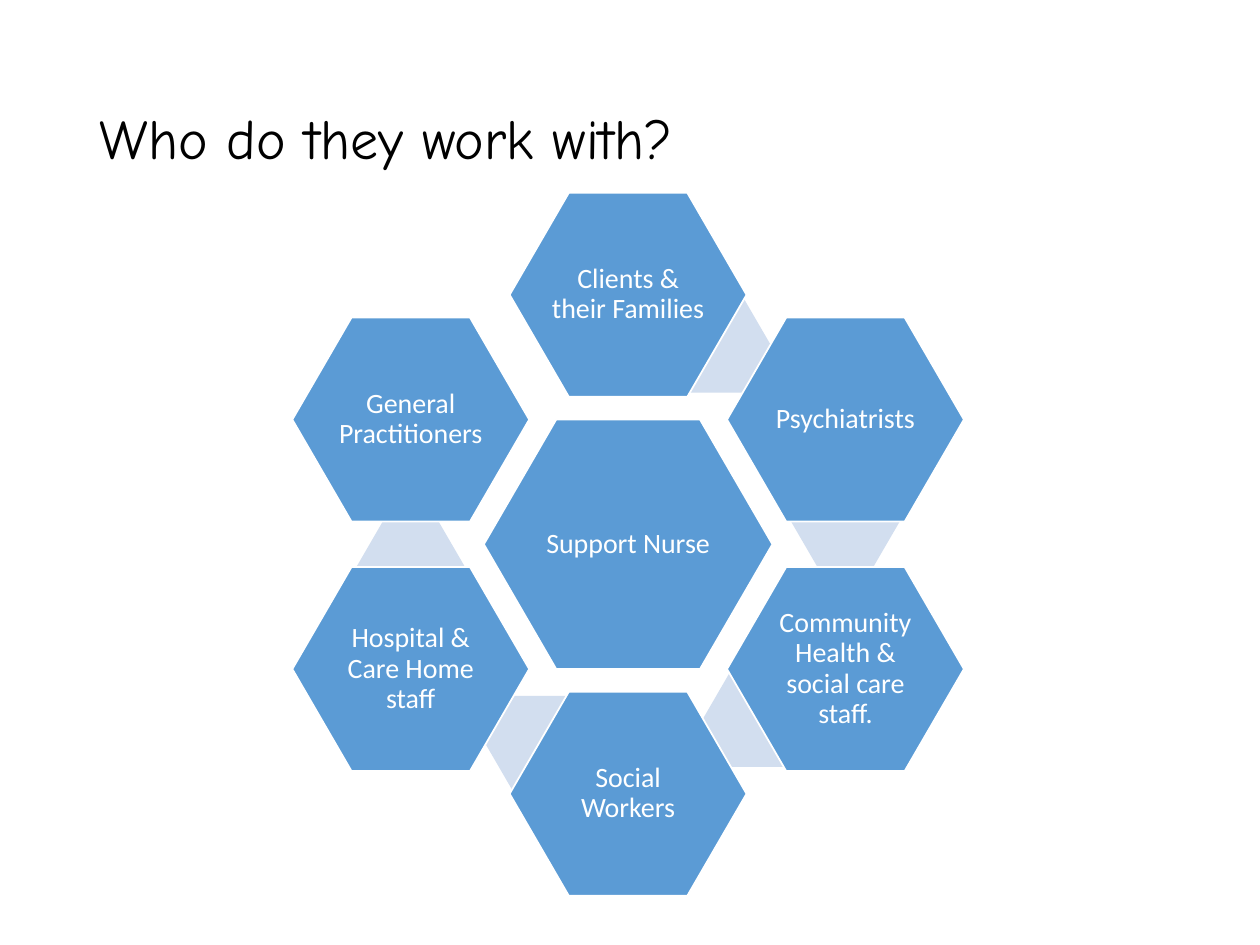
from dataclasses import dataclass

from pptx import Presentation
from pptx.dml.color import RGBColor
from pptx.enum.shapes import MSO_SHAPE
from pptx.enum.text import MSO_ANCHOR, PP_ALIGN
from pptx.util import Inches, Pt


@dataclass(frozen=True)
class Theme:
    node: str = "5B9BD5"
    accent: str = "D2DEEF"
    light: str = "FFFFFF"
    dark: str = "000000"
    title_font: str = "Comic Neue"
    body_font: str = "Calibri"
    title_size: int = 32
    body_size: int = 16


THEME = Theme()
HUB = "Support Nurse"
PARTNERS = [
    ("Clients & their Families", 0, -2),
    ("Psychiatrists", 1, -1),
    ("Community Health & social care staff.", 1, 1),
    ("Social Workers", 0, 2),
    ("Hospital & Care Home staff", -1, 1),
    ("General Practitioners", -1, -1),
]
HUB_SIZE = (2.29, 1.98)
NODE_SIZE = (1.88, 1.62)
ACCENT_SIZE = (0.86, 0.74)
ACCENT_SHARE = 0.41


def write(tf, text, font, size, color, align=PP_ALIGN.LEFT, inset=None):
    tf.word_wrap = True
    tf.vertical_anchor = MSO_ANCHOR.MIDDLE
    if inset is not None:
        tf.margin_left = tf.margin_right = Inches(inset)
        tf.margin_top = tf.margin_bottom = Inches(inset)
    p = tf.paragraphs[0]
    p.alignment = align
    p.line_spacing = 0.9
    r = p.add_run()
    r.text = text
    r.font.name = font
    r.font.size = Pt(size)
    r.font.color.rgb = RGBColor.from_string(color)


def add_hexagon(s, cx, cy, size, fill, text=None):
    w, h = size
    sp = s.shapes.add_shape(MSO_SHAPE.HEXAGON, Inches(cx - w / 2),
                            Inches(cy - h / 2), Inches(w), Inches(h))
    sp.adjustments[0] = 0.29
    sp.shadow.inherit = False
    sp.fill.solid()
    sp.fill.fore_color.rgb = RGBColor.from_string(fill)
    if text is None:
        sp.line.fill.background()
        return
    sp.line.color.rgb = RGBColor.from_string(THEME.light)
    sp.line.width = Pt(1)
    write(sp.text_frame, text, THEME.body_font, THEME.body_size, THEME.light,
          align=PP_ALIGN.CENTER, inset=0.02)


def add_title(s, text, left, top, width, height):
    sp = s.shapes.title
    sp.left, sp.top = Inches(left), Inches(top)
    sp.width, sp.height = Inches(width), Inches(height)
    write(sp.text_frame, text, THEME.title_font, THEME.title_size, THEME.dark)


def add_ring(s, left, top, width, height):
    cx, cy = left + width / 2, top + height / 2
    col = (width - NODE_SIZE[0]) / 2
    row = (height - NODE_SIZE[1]) / 4
    add_hexagon(s, cx, cy, HUB_SIZE, THEME.node, HUB)
    for i, (text, x, y) in enumerate(PARTNERS):
        if i + 1 < len(PARTNERS):
            _, next_x, next_y = PARTNERS[i + 1]
            ax = x + ACCENT_SHARE * (next_x - x)
            ay = y + ACCENT_SHARE * (next_y - y)
            add_hexagon(s, cx + ax * col, cy + ay * row, ACCENT_SIZE, THEME.accent)
        add_hexagon(s, cx + x * col, cy + y * row, NODE_SIZE, THEME.node, text)


def main():
    prs = Presentation()
    prs.slide_width, prs.slide_height = Inches(10), Inches(7.5)
    s = prs.slides.add_slide(prs.slide_layouts[5])
    add_title(s, "Who do they work with?", 0.69, 0.4, 8.62, 1.45)
    add_ring(s, 2.32, 1.53, 5.33, 5.58)
    prs.save("out.pptx")


if __name__ == "__main__":
    main()
